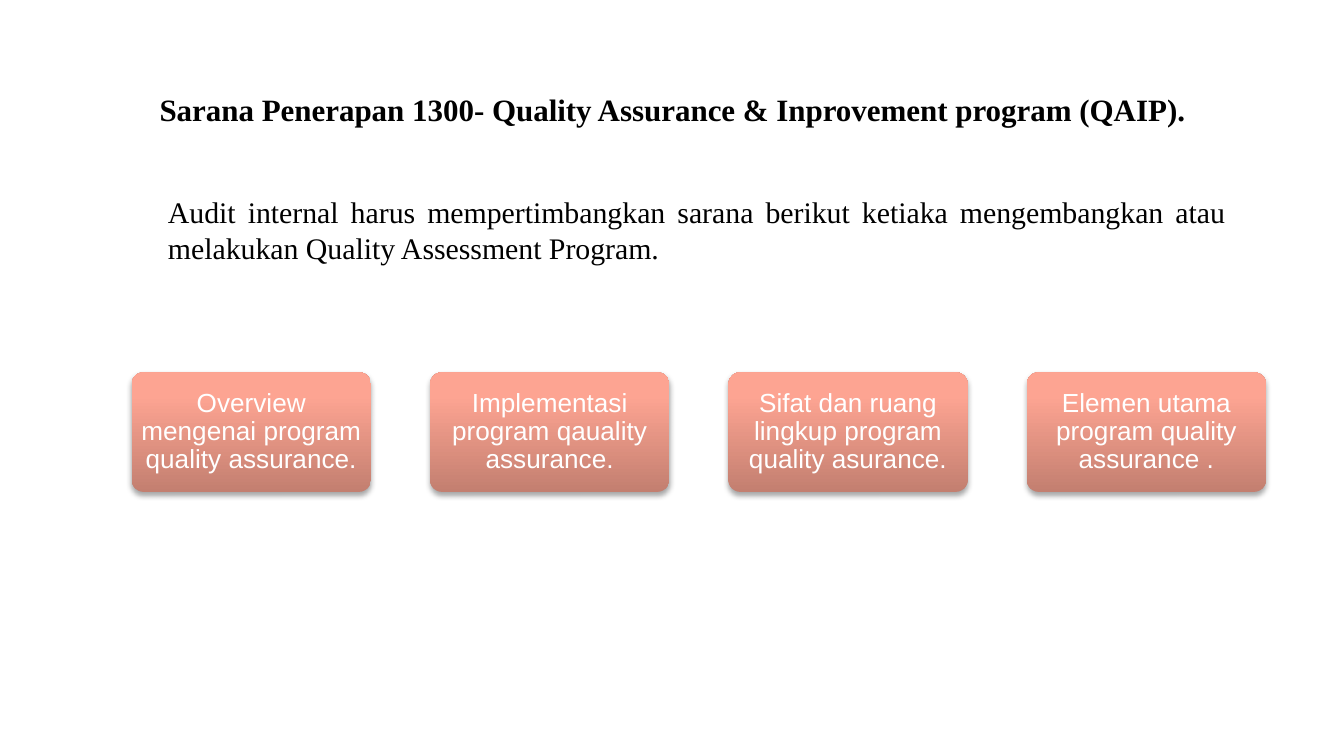
import pptx
import pptx.dml.color
import pptx.enum.shapes
import pptx.enum.text
import pptx.oxml
import pptx.oxml.ns
import pptx.util
from pptx.util import Inches

ALIGN = pptx.enum.text.PP_ALIGN
ANCHOR = pptx.enum.text.MSO_ANCHOR
NS = pptx.oxml.ns.nsdecls("a")
GRADIENT = [(0, "C37F70"), (80, "FDA492"), (100, "FFA491")]
CARDS = [
    "Overview mengenai program quality assurance.",
    "Implementasi program qauality assurance.",
    "Sifat dan ruang lingkup program quality asurance.",
    "Elemen utama program quality assurance .",
]
CARD_LEFT, CARD_TOP, CARD_STEP = 0.98, 2.77, 2.22


def rgb(value):
    return pptx.dml.color.RGBColor.from_string(value)


def set_text(sp, text, font, size, color, align, bold=False):
    tf = sp.text_frame
    tf.word_wrap = True
    tf.text = text
    p = tf.paragraphs[0]
    p.alignment = align
    r = p.runs[0]
    r.font.name = font
    r.font.size = pptx.util.Pt(size)
    r.font.bold = bold
    r.font.color.rgb = rgb(color)
    return tf


def set_gradient(sp):
    """Shade the shape from bottom to top with the GRADIENT stops."""
    sp.fill.gradient()
    sp.fill.gradient_angle = 90
    stops = sp._element.spPr.find(".//" + pptx.oxml.ns.qn("a:gsLst"))
    for stop in list(stops):
        stops.remove(stop)
    for position, color in GRADIENT:
        stops.append(pptx.oxml.parse_xml(
            f'<a:gs {NS} pos="{position * 1000}"><a:srgbClr val="{color}"/></a:gs>'))


def set_shadow(sp):
    sp.shadow.inherit = False
    effects = sp._element.spPr.find(pptx.oxml.ns.qn("a:effectLst"))
    blur, distance = pptx.util.Pt(3.1), pptx.util.Pt(1.8)
    effects.append(pptx.oxml.parse_xml(
        f'<a:outerShdw {NS} blurRad="{blur}" dist="{distance}" dir="5400000" '
        'rotWithShape="0"><a:srgbClr val="000000"><a:alpha val="35000"/>'
        '</a:srgbClr></a:outerShdw>'))


def add_title(s, text):
    sp = s.shapes.title
    sp.left, sp.top = Inches(0.5), Inches(0.61)
    sp.width, sp.height = Inches(9), Inches(0.62)
    tf = set_text(sp, text, "Times New Roman", 16.6, "000000", ALIGN.CENTER, bold=True)
    tf.auto_size = pptx.enum.text.MSO_AUTO_SIZE.NONE
    tf.vertical_anchor = ANCHOR.TOP
    tf.margin_top = Inches(0.06)


def add_body(s, text):
    sp = s.shapes.add_textbox(Inches(0.78), Inches(1.39), Inches(8.44), Inches(0.64))
    tf = set_text(sp, text, "Times New Roman", 16, "000000", ALIGN.JUSTIFY)
    tf.margin_left = Inches(0.47)


def add_card(s, left, text):
    sp = s.shapes.add_shape(
        pptx.enum.shapes.MSO_SHAPE.ROUNDED_RECTANGLE,
        Inches(left), Inches(CARD_TOP), Inches(1.78), Inches(0.89))
    sp.adjustments[0] = 0.1
    set_gradient(sp)
    sp.line.fill.background()
    set_shadow(sp)
    tf = set_text(sp, text, "Arial", 14, "FFFFFF", ALIGN.CENTER)
    tf.vertical_anchor = ANCHOR.MIDDLE
    tf.margin_left = tf.margin_right = Inches(0.03)
    tf.margin_top = tf.margin_bottom = Inches(0.02)
    tf.paragraphs[0].line_spacing = 0.9


def main():
    prs = pptx.Presentation()
    prs.slide_width = Inches(10)
    prs.slide_height = prs.slide_width * 9 // 16
    s = prs.slides.add_slide(prs.slide_layouts[5])
    add_title(s, "Sarana Penerapan 1300- Quality Assurance & Inprovement program (QAIP).")
    add_body(s, "Audit internal harus mempertimbangkan sarana berikut ketiaka "
                "mengembangkan atau melakukan Quality Assessment Program.")
    for i, text in enumerate(CARDS):
        add_card(s, CARD_LEFT + i * CARD_STEP, text)
    prs.save("out.pptx")


if __name__ == "__main__":
    main()
